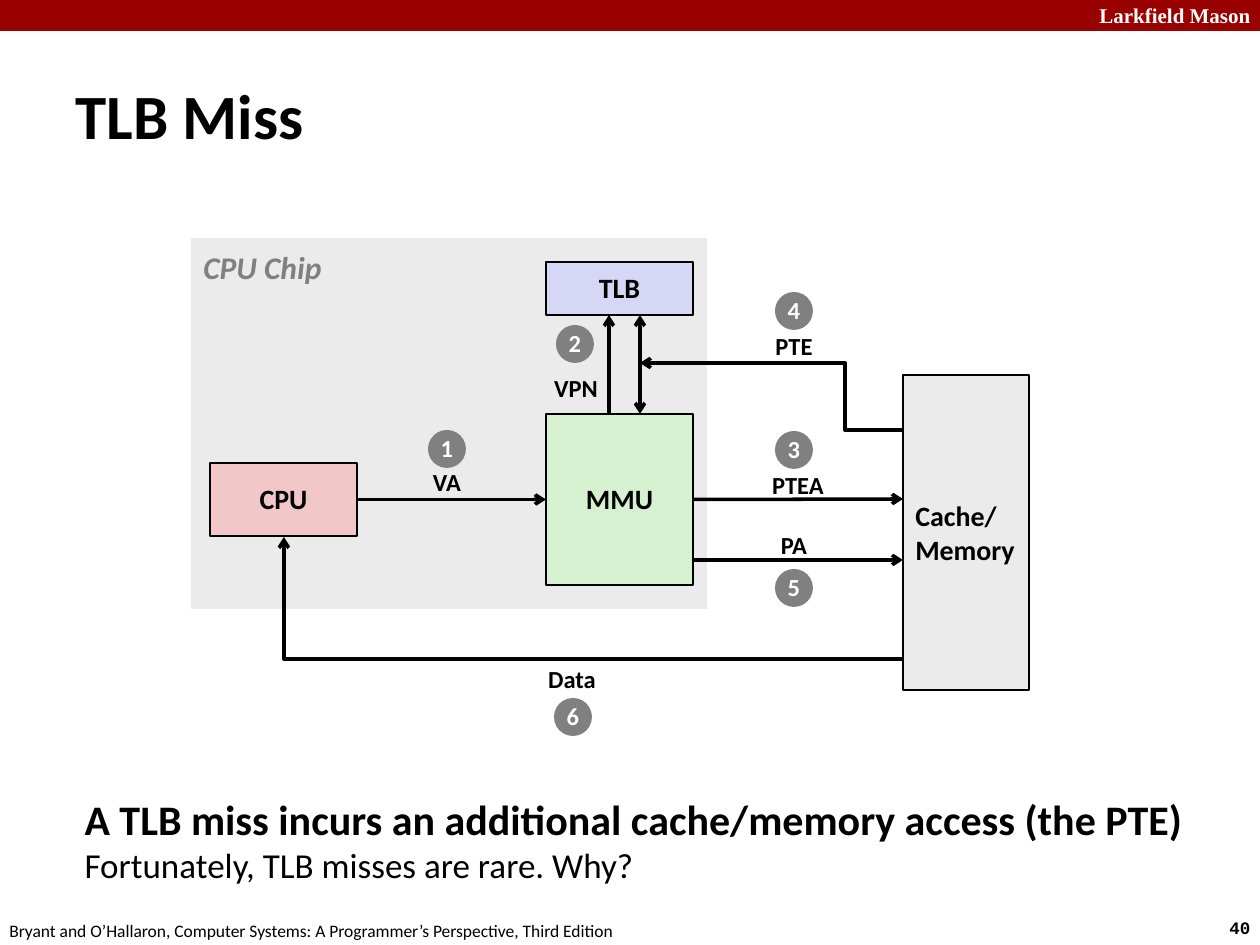
import pptx
import pptx.dml.color
import pptx.enum.shapes
import pptx.enum.text
import pptx.oxml.ns
import pptx.util
from lxml import etree

PX = 914400 / 126  # EMU in one px
BLACK, WHITE, GRAY, PALE, RED = "000000", "FFFFFF", "808080", "EBEBEB", "990000"
ALIGN = pptx.enum.text.PP_ALIGN
ANCHOR = pptx.enum.text.MSO_ANCHOR
SHAPE = pptx.enum.shapes.MSO_SHAPE
CONNECTOR = pptx.enum.shapes.MSO_CONNECTOR
qn = pptx.oxml.ns.qn


def px(*lengths):
    return [pptx.util.Emu(round(length * PX)) for length in lengths]


def color(code):
    return pptx.dml.color.RGBColor.from_string(code)


def style_run(run, size, code=BLACK, bold=True, italic=False, font="Calibri"):
    run.font.name = font
    run.font.size = pptx.util.Pt(size)
    run.font.bold = bold
    run.font.italic = italic
    run.font.color.rgb = color(code)


def write(shape, text, size, align=ALIGN.CENTER, anchor=ANCHOR.MIDDLE,
          wrap=False, spacing=None, **style):
    frame = shape.text_frame
    frame.text = text
    frame.word_wrap = wrap
    frame.auto_size = pptx.enum.text.MSO_AUTO_SIZE.NONE
    frame.vertical_anchor = anchor
    for paragraph in frame.paragraphs:
        paragraph.alignment = align
        paragraph.line_spacing = spacing
        for run in paragraph.runs:
            style_run(run, size, **style)


def add_box(slide, bounds, fill, line_width=None, kind=SHAPE.RECTANGLE):
    box = slide.shapes.add_shape(kind, *px(*bounds))
    box.shadow.inherit = False
    box.fill.solid()
    box.fill.fore_color.rgb = color(fill)
    if line_width:
        box.line.color.rgb = color(BLACK)
        box.line.width = pptx.util.Pt(line_width)
    else:
        box.line.fill.background()
    return box


def add_unit(slide, name, bounds, fill):
    unit = add_box(slide, bounds, fill, 1)
    write(unit, name, 16, spacing=0.98)
    return unit


def add_text(slide, text, bounds, size, **options):
    write(slide.shapes.add_textbox(*px(*bounds)), text, size, **options)


def add_label(slide, text, x, y):
    width, height = 76, 42
    add_text(slide, text, (x - width / 2, y - height / 2, width, height), 14,
             spacing=0.98)


def add_step(slide, number, x, y):
    size = 38
    badge = add_box(slide, (x - size / 2, y - size / 2, size, size), GRAY,
                    kind=SHAPE.OVAL)
    write(badge, str(number), 14, code=WHITE, spacing=0.98)


def add_arrow(slide, start, end, kind=CONNECTOR.STRAIGHT, both=False):
    arrow = slide.shapes.add_connector(kind, *px(*start, *end))
    arrow.line.color.rgb = color(BLACK)
    arrow.line.width = pptx.util.Pt(2)
    line = arrow.line._get_or_add_ln()
    for tag in ("a:headEnd", "a:tailEnd") if both else ("a:tailEnd",):
        etree.SubElement(line, qn(tag), type="arrow")
    etree.SubElement(arrow._element.spPr, qn("a:effectLst"))
    return arrow


def add_bent_arrow(slide, start, end, bend=None):
    """Bend at a fraction of the width, or turn a single corner without one."""
    arrow = add_arrow(slide, start, end, CONNECTOR.ELBOW)
    geometry = arrow._element.spPr.find(qn("a:prstGeom"))
    if bend is None:
        geometry.set("prst", "bentConnector2")
    else:
        guides = geometry.find(qn("a:avLst"))
        if guides is None:
            guides = etree.SubElement(geometry, qn("a:avLst"))
        etree.SubElement(guides, qn("a:gd"), name="adj1",
                         fmla=f"val {round(bend * 100000)}")


def place(placeholder, bounds):
    (placeholder.left, placeholder.top,
     placeholder.width, placeholder.height) = px(*bounds)


def add_title_and_body(slide):
    title, body = slide.placeholders
    place(title, (63, 60, 1200, 108))
    write(title, "TLB Miss", 36, ALIGN.LEFT, wrap=True)

    place(body, (72, 787, 1137, 126))
    write(body, "A TLB miss incurs an additional cache/memory access (the PTE)\v"
                "Fortunately, TLB misses are rare. Why?",
          24, ALIGN.LEFT, ANCHOR.TOP, wrap=True)
    paragraph = body.text_frame.paragraphs[0]
    style_run(paragraph.runs[1], 20, bold=False)
    properties = paragraph._p.get_or_add_pPr()
    properties.set("marL", "0")
    properties.set("indent", "0")
    etree.SubElement(properties, qn("a:buNone"))


def add_frame(slide):
    add_box(slide, (0, 0, 1260, 31), RED)
    add_text(slide, "Larkfield Mason", (1063, -4, 200, 38), 12,
             align=ALIGN.RIGHT, anchor=ANCHOR.TOP, code=WHITE,
             font="Times New Roman")
    add_text(slide, "40", (1217, 911, 57, 34), 10, align=ALIGN.LEFT,
             anchor=ANCHOR.TOP, font="Courier New")
    add_text(slide, "Bryant and O’Hallaron, Computer Systems: "
                    "A Programmer’s Perspective, Third Edition",
             (-3, 914, 640, 34), 10, align=ALIGN.LEFT, anchor=ANCHOR.TOP,
             bold=False)


def add_diagram(slide):
    # Chip and its units
    add_box(slide, (191, 238, 516, 371), PALE)
    add_text(slide, "CPU Chip", (191, 242, 146, 50), 18, align=ALIGN.LEFT,
             anchor=ANCHOR.TOP, code=GRAY, italic=True)
    mmu = add_unit(slide, "MMU", (546, 414, 147, 171), "D5F1CF")
    cpu = add_unit(slide, "CPU", (210, 463, 147, 73), "F1C7C7")
    add_unit(slide, "TLB", (546, 262, 147, 53), "D6D6F5")
    memory = add_box(slide, (903, 375, 126, 315), PALE, 1.5)
    write(memory, "Cache/\nMemory", 16, ALIGN.LEFT)

    # Transfers
    va = add_arrow(slide, (357, 499), (546, 499))
    va.begin_connect(cpu, 3)
    va.end_connect(mmu, 1)
    ptea = add_arrow(slide, (693, 499), (903, 499))
    ptea.begin_connect(mmu, 3)
    add_arrow(slide, (693, 560), (903, 560))
    add_arrow(slide, (609, 414), (609, 315))
    add_arrow(slide, (640, 315), (640, 414), both=True)
    add_bent_arrow(slide, (903, 430), (640, 363), bend=0.22)
    add_bent_arrow(slide, (903, 659), (284, 537))

    # Labels and step numbers in order of the transfers
    transfers = [
        ("VA", (447, 483), (447, 449)),
        ("VPN", (576, 389), (575, 344)),
        ("PTEA", (798, 486), (794, 450)),
        ("PTE", (794, 347), (794, 311)),
        ("PA", (794, 546), (794, 588)),
        ("Data", (572, 680), (573, 717)),
    ]
    for number, (name, label_center, step_center) in enumerate(transfers, 1):
        add_label(slide, name, *label_center)
        add_step(slide, number, *step_center)


def main():
    deck = pptx.Presentation()
    deck.slide_width, deck.slide_height = px(1260, 945)
    slide = deck.slides.add_slide(deck.slide_layouts[1])
    add_frame(slide)
    add_diagram(slide)
    add_title_and_body(slide)
    deck.save("out.pptx")


if __name__ == "__main__":
    main()
